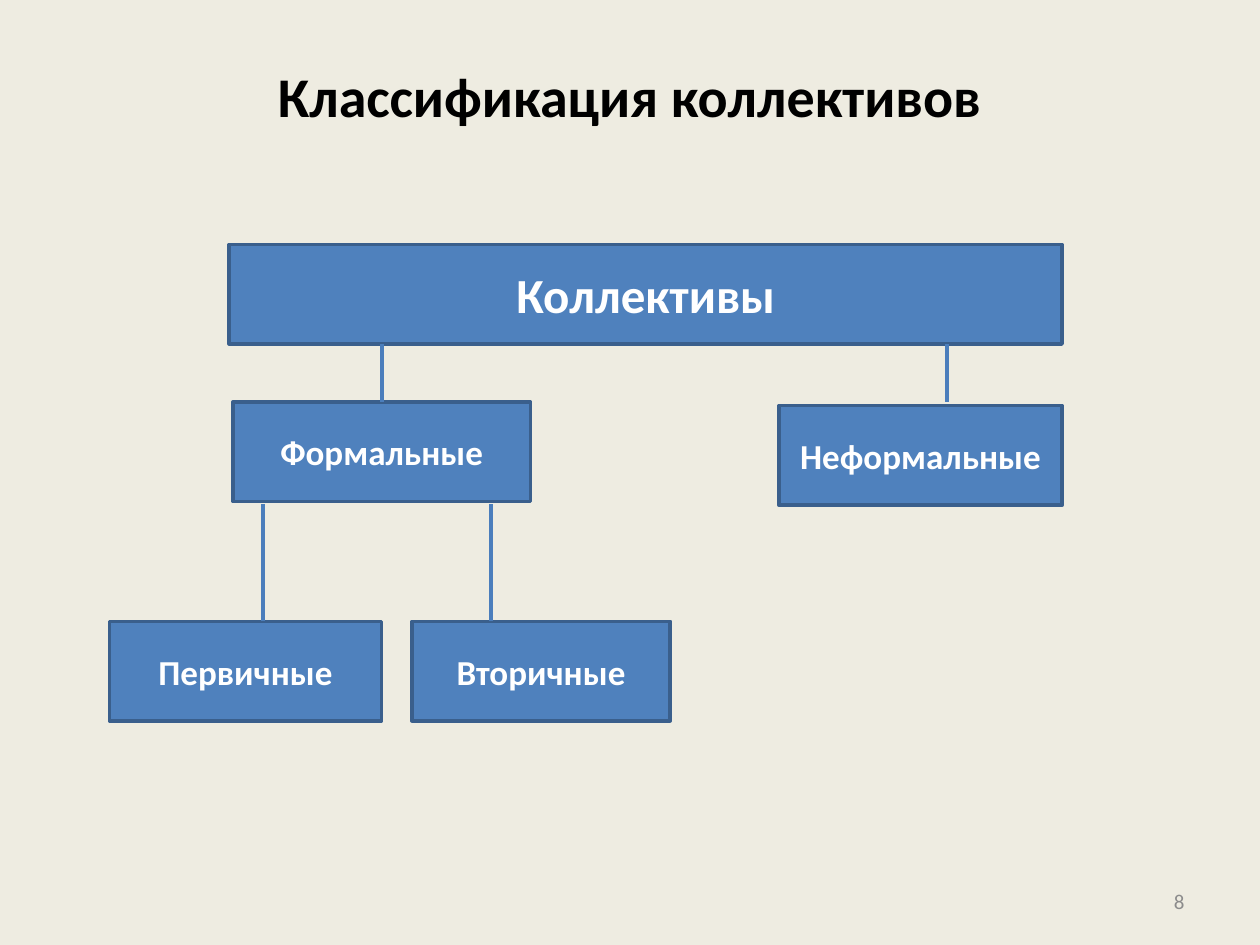
import dataclasses

import pptx
import pptx.dml.color
import pptx.enum.shapes
import pptx.enum.text
import pptx.oxml.ns
import pptx.slide
import pptx.util
from lxml import etree

Pt = pptx.util.Pt
RGBColor = pptx.dml.color.RGBColor
Align = pptx.enum.text.PP_ALIGN

CREAM = RGBColor(0xEE, 0xEC, 0xE1)
BLUE = RGBColor(0x4F, 0x81, 0xBD)
EDGE = RGBColor(0x3A, 0x5F, 0x8C)
LINK = RGBColor(0x4B, 0x7E, 0xBC)
WHITE = RGBColor(0xFF, 0xFF, 0xFF)
BLACK = RGBColor(0, 0, 0)
GREY = RGBColor(0x8C, 0x8C, 0x8C)

HIGH = 56.9  # height of every box


@dataclasses.dataclass
class Label:
    text: str
    left: float
    top: float
    width: float
    height: float = HIGH
    size: float = 20
    color: RGBColor = WHITE
    bold: bool = True
    align: Align = Align.CENTER


@dataclasses.dataclass
class Link:
    x: float
    top: float
    end: float


# Free text: title and page number
TITLE = Label("Классификация коллективов", 36, 9.4, 648, 90, 32, BLACK)
PAGE = Label("8", 516, 500.5, 168, 28.8, 12, GREY, False, Align.RIGHT)

# Tree of boxes, level by level
BOXES = [
    Label("Коллективы", 131, 139.7, 475.9, size=28),
    Label("Формальные", 133.2, 229.7, 169.9),
    Label("Неформальные", 445, 231.8, 162),
    Label("Первичные", 62.6, 355, 155.5),
    Label("Вторичные", 235.4, 355, 147.6),
]
LINKS = [
    Link(218.2, 196.6, 229.7),
    Link(541.4, 196.6, 229.7),
    Link(150.5, 288, 355),
    Link(280.8, 288, 355),
]


def write(shape, label: Label) -> None:
    frame = shape.text_frame
    frame.word_wrap = True
    frame.vertical_anchor = pptx.enum.text.MSO_ANCHOR.MIDDLE
    para = frame.paragraphs[0]
    para.alignment = label.align
    run = para.add_run()
    run.text = label.text
    run.font.name = "Calibri"
    run.font.size = Pt(label.size)
    run.font.bold = label.bold
    run.font.color.rgb = label.color


def area(label: Label) -> tuple:
    return Pt(label.left), Pt(label.top), Pt(label.width), Pt(label.height)


def add_text(slide: pptx.slide.Slide, label: Label) -> None:
    write(slide.shapes.add_textbox(*area(label)), label)


def add_box(slide: pptx.slide.Slide, label: Label) -> None:
    kind = pptx.enum.shapes.MSO_SHAPE.RECTANGLE
    box = slide.shapes.add_shape(kind, *area(label))
    box.shadow.inherit = False
    box.fill.solid()
    box.fill.fore_color.rgb = BLUE
    box.line.color.rgb = EDGE
    box.line.width = Pt(2)
    write(box, label)


def add_link(slide: pptx.slide.Slide, link: Link) -> None:
    kind = pptx.enum.shapes.MSO_CONNECTOR.STRAIGHT
    line = slide.shapes.add_connector(
        kind, Pt(link.x), Pt(link.top), Pt(link.x), Pt(link.end))
    line.line.color.rgb = LINK
    line.line.width = Pt(2.25)
    # An empty effect list turns the theme shadow off
    etree.SubElement(line._element.spPr, pptx.oxml.ns.qn("a:effectLst"))


def main() -> None:
    deck = pptx.Presentation()
    deck.slide_width, deck.slide_height = Pt(720), Pt(540)
    slide = deck.slides.add_slide(deck.slide_layouts[6])
    slide.background.fill.solid()
    slide.background.fill.fore_color.rgb = CREAM

    for label in (TITLE, PAGE):
        add_text(slide, label)
    for box in BOXES:
        add_box(slide, box)
    for link in LINKS:
        add_link(slide, link)

    deck.save("out.pptx")


if __name__ == "__main__":
    main()
